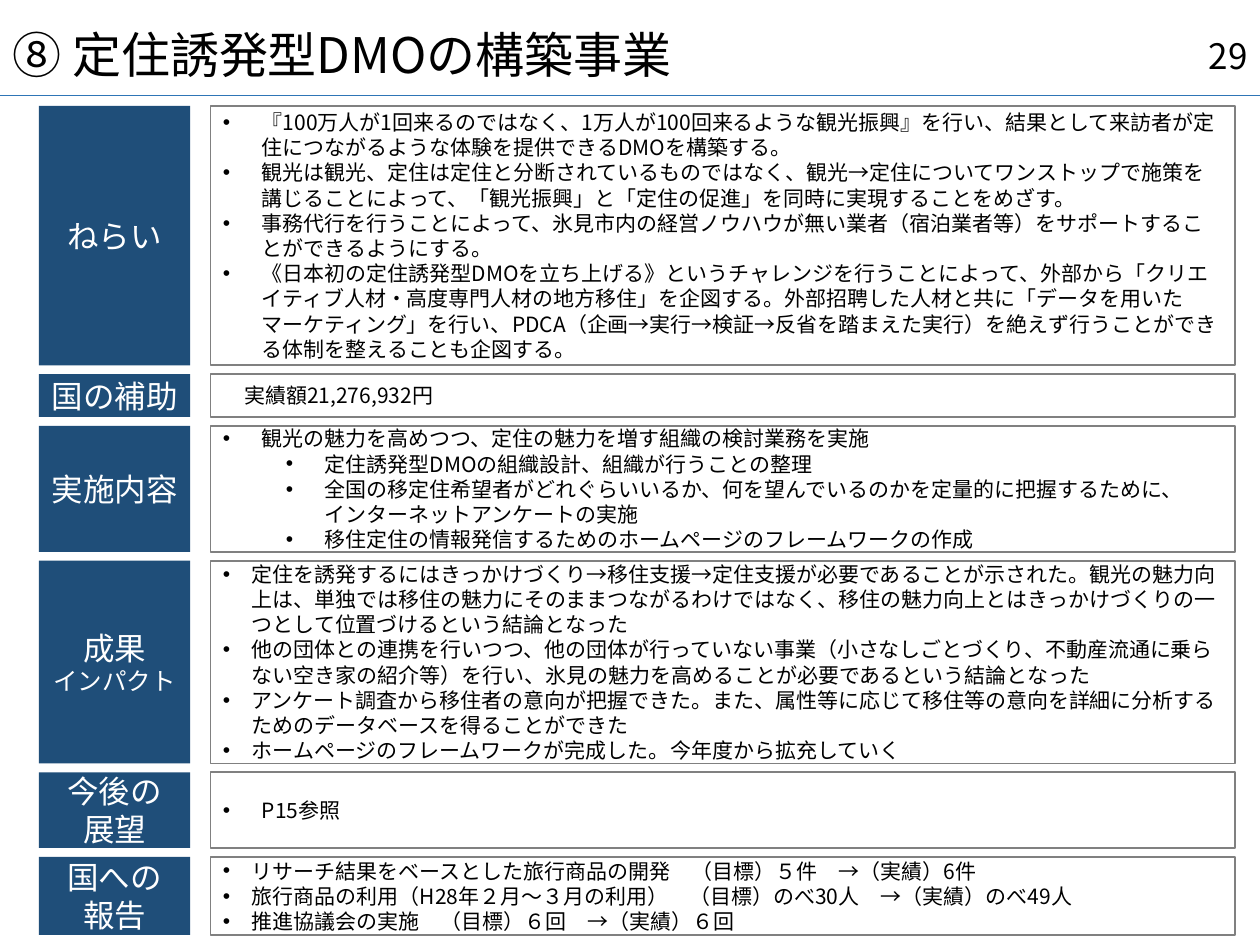
from lxml.etree import SubElement
from pptx import Presentation
from pptx.dml.color import RGBColor
from pptx.enum.shapes import MSO_CONNECTOR as Connector, MSO_SHAPE as Shape
from pptx.enum.text import MSO_ANCHOR as Anchor, PP_ALIGN as Align
from pptx.oxml.ns import qn
from pptx.util import Inches, Pt

FONT = "Noto Sans CJK JP"
WIDTH, HEIGHT = 10, 7.5
LABEL_LEFT, LABEL_WIDTH = 0.31, 1.2
BODY_LEFT, BODY_WIDTH = 1.67, 8.13
FIRST_TOP, GAP = 0.84, 0.07
NAVY, WHITE, BLACK, GREY, BLUE = "1F4E79", "FFFFFF", "000000", "808080", "2E75B6"

SECTIONS = [
    (2.06, [("ねらい", 18)], 0.31, [
        (0, "『100万人が1回来るのではなく、1万人が100回来るような観光振興』を行い、結果として来訪者が定住につながるような体験を提供できるDMOを構築する。"),
        (0, "観光は観光、定住は定住と分断されているものではなく、観光→定住についてワンストップで施策を講じることによって、「観光振興」と「定住の促進」を同時に実現することをめざす。"),
        (0, "事務代行を行うことによって、氷見市内の経営ノウハウが無い業者（宿泊業者等）をサポートすることができるようにする。"),
        (0, "《日本初の定住誘発型DMOを立ち上げる》というチャレンジを行うことによって、外部から「クリエイティブ人材・高度専門人材の地方移住」を企図する。外部招聘した人材と共に「データを用いたマーケティング」を行い、PDCA（企画→実行→検証→反省を踏まえた実行）を絶えず行うことができる体制を整えることも企図する。"),
    ]),
    (0.34, [("国の補助", 18)], None, [(0, "実績額21,276,932円")]),
    (1, [("実施内容", 18)], 0.31, [
        (0, "観光の魅力を高めつつ、定住の魅力を増す組織の検討業務を実施"),
        (1, "定住誘発型DMOの組織設計、組織が行うことの整理"),
        (1, "全国の移定住希望者がどれぐらいいるか、何を望んでいるのかを定量的に把握するために、\nインターネットアンケートの実施"),
        (1, "移住定住の情報発信するためのホームページのフレームワークの作成"),
    ]),
    (1.61, [("成果", 18), ("インパクト", 14)], 0.23, [
        (0, "定住を誘発するにはきっかけづくり→移住支援→定住支援が必要であることが示された。観光の魅力向上は、単独では移住の魅力にそのままつながるわけではなく、移住の魅力向上とはきっかけづくりの一つとして位置づけるという結論となった"),
        (0, "他の団体との連携を行いつつ、他の団体が行っていない事業（小さなしごとづくり、不動産流通に乗らない空き家の紹介等）を行い、氷見の魅力を高めることが必要であるという結論となった"),
        (0, "アンケート調査から移住者の意向が把握できた。また、属性等に応じて移住等の意向を詳細に分析するためのデータベースを得ることができた"),
        (0, "ホームページのフレームワークが完成した。今年度から拡充していく"),
    ]),
    (0.6, [("今後の", 18), ("展望", 18)], 0.31, [(0, "P15参照")]),
    (0.62, [("国への\n報告", 18)], 0.23, [
        (0, "リサーチ結果をベースとした旅行商品の開発　（目標）５件　→（実績）6件"),
        (0, "旅行商品の利用（H28年２月～３月の利用）　（目標）のべ30人　→（実績）のべ49人"),
        (0, "推進協議会の実施　（目標）６回　→（実績）６回"),
    ]),
]


def color(value):
    return RGBColor.from_string(value)


def prepare(frame):
    frame.word_wrap = True
    frame.vertical_anchor = Anchor.MIDDLE
    return frame


def next_paragraph(frame, index):
    return frame.add_paragraph() if index else frame.paragraphs[0]


def write(paragraph, text, size, ink, align):
    paragraph.alignment = align
    for index, line in enumerate(text.split("\n")):
        if index:
            paragraph.add_line_break()
        run = paragraph.add_run()
        run.text = line
        run.font.size = Pt(size)
        run.font.name = FONT
        run.font.color.rgb = color(ink)
        SubElement(run.font._element, qn("a:ea"), typeface=FONT)


def indent(paragraph, margin, hanging=0):
    properties = paragraph._p.get_or_add_pPr()
    properties.set("marL", str(Inches(margin)))
    properties.set("indent", str(-Inches(hanging)))
    if hanging:
        SubElement(properties, qn("a:buFont"), typeface="Arial")
        SubElement(properties, qn("a:buChar"), char="•")


def add_box(slide, left, top, width, height, fill, outline=None):
    box = slide.shapes.add_shape(Shape.RECTANGLE, *map(Inches, (left, top, width, height)))
    box.shadow.inherit = False
    box.fill.solid()
    box.fill.fore_color.rgb = color(fill)
    if outline:
        box.line.color.rgb = color(outline)
        box.line.width = Pt(1)
    else:
        box.line.fill.background()
    return prepare(box.text_frame)


def add_label(slide, top, height, lines):
    frame = add_box(slide, LABEL_LEFT, top, LABEL_WIDTH, height, NAVY)
    frame.margin_left = frame.margin_right = Inches(0.05)
    for index, (text, size) in enumerate(lines):
        write(next_paragraph(frame, index), text, size, WHITE, Align.CENTER)


def add_body(slide, top, height, hanging, items):
    frame = add_box(slide, BODY_LEFT, top, BODY_WIDTH, height, WHITE, GREY)
    for index, (level, text) in enumerate(items):
        paragraph = next_paragraph(frame, index)
        paragraph.level = level
        write(paragraph, text, 12, BLACK, Align.LEFT)
        if hanging:
            indent(paragraph, hanging + level * 0.5, hanging)
        else:
            indent(paragraph, 0.17)


def add_heading(slide, left, top, width, height, text, size, align):
    box = slide.shapes.add_textbox(*map(Inches, (left, top, width, height)))
    paragraph = prepare(box.text_frame).paragraphs[0]
    paragraph.line_spacing = 0.9
    write(paragraph, text, size, BLACK, align)


def add_rule(slide, top):
    rule = slide.shapes.add_connector(
        Connector.STRAIGHT, 0, Inches(top), Inches(WIDTH), Inches(top))
    rule.line.color.rgb = color(BLUE)
    rule.line.width = Pt(0.5)
    SubElement(rule._element.spPr, qn("a:effectLst"))


def main():
    deck = Presentation()
    deck.slide_width, deck.slide_height = Inches(WIDTH), Inches(HEIGHT)
    slide = deck.slides.add_slide(deck.slide_layouts[6])
    add_rule(slide, 0.76)
    add_heading(slide, 0, 0.31, WIDTH, 0.29, "⑧ 定住誘発型DMOの構築事業", 28, Align.LEFT)
    add_heading(slide, 7.75, 0.26, 2.25, 0.4, "29", 20, Align.RIGHT)
    top = FIRST_TOP
    for height, label, hanging, items in SECTIONS:
        add_label(slide, top, height, label)
        add_body(slide, top, height, hanging, items)
        top += height + GAP
    deck.save("out.pptx")


if __name__ == "__main__":
    main()
